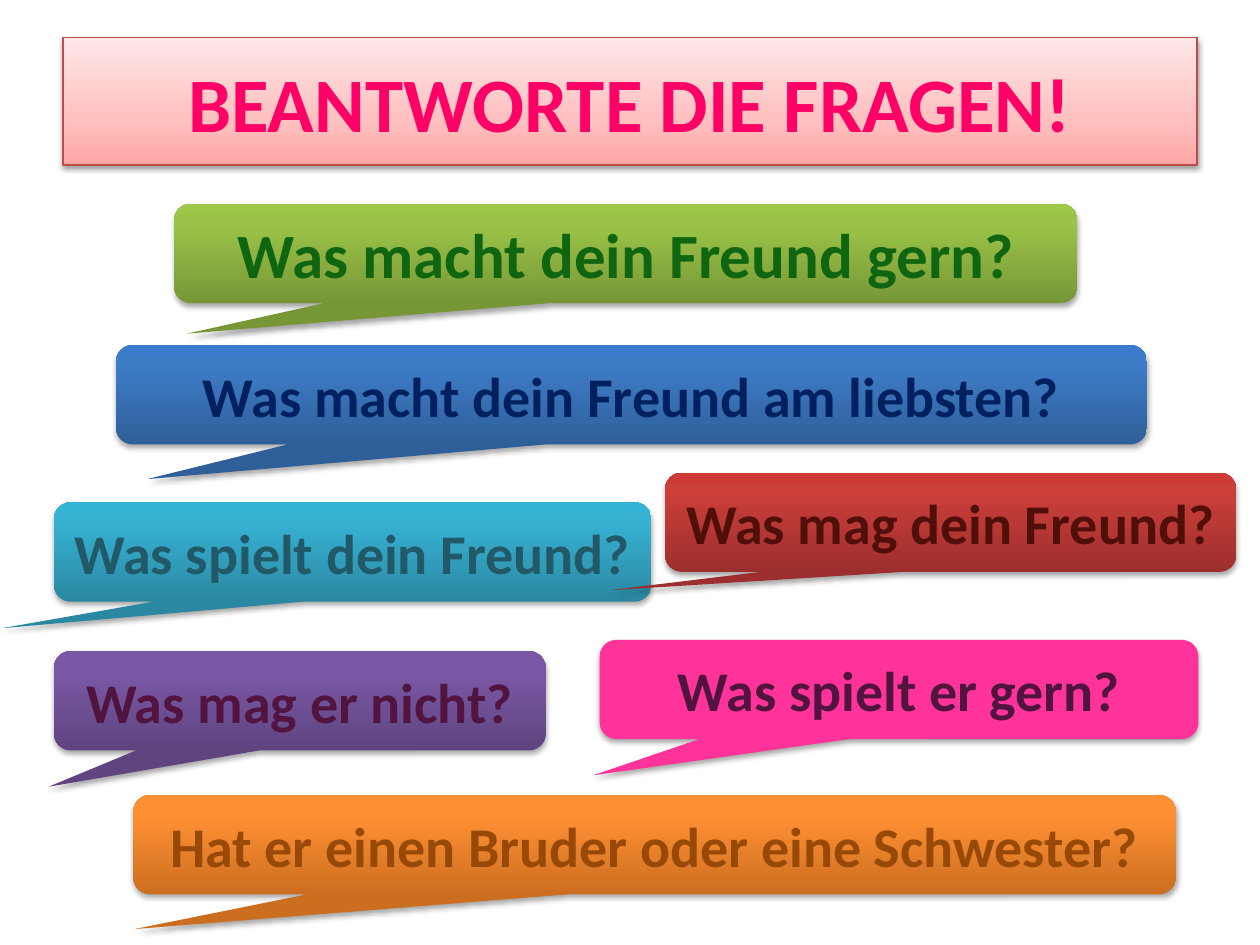
import copy
from dataclasses import dataclass

import pptx
import pptx.dml.color
import pptx.enum.shapes
import pptx.enum.text
import pptx.oxml
import pptx.oxml.ns
import pptx.util
from pptx.util import Cm


@dataclass(frozen=True)
class Style:
    fill: tuple
    text: str
    size: int = 32


@dataclass(frozen=True)
class Shadow:
    opacity: int
    distance: float
    blur: float = 3.15


@dataclass(frozen=True)
class Box:
    left: float
    top: float
    width: float
    height: float = 2.0


class Theme:
    font = "Calibri"
    title_line = "BF4C48"
    title_line_width = 0.75
    title_shadow = Shadow(38, 1.57)
    callout_shadow = Shadow(35, 1.81)
    title = Style(((0, "FFA6A5"), (35, "FFC0BF"), (100, "FFE7E7")), "FF0066", 44)
    green = Style(((0, "779737"), (80, "9BC348"), (100, "9DC746")), "106610", 36)
    blue = Style(((0, "2F5F99"), (80, "3D7CC7"), (100, "3A7CCB")), "002060")
    teal = Style(((0, "2A88A2"), (80, "37B1D2"), (100, "34B4D6")), "215968")
    red = Style(((0, "9C2F2D"), (80, "CB3E3A"), (100, "CE3B37")), "500F08")
    orange = Style(((0, "CC6E20"), (80, "FF9034"), (100, "FF9136")), "984807")
    purple = Style(((0, "5F4480"), (80, "7B58A6"), (100, "7C57A8")), "50143F")
    pink = Style(((0, "FF3399"),), "50143F")


CALLOUTS = [
    ("Was macht dein Freund gern?", Box(3.51, 4.11, 18.21), (-0.486, 0.809), Theme.green),
    ("Was macht dein Freund am liebsten?", Box(2.34, 6.96, 20.78), (-0.47, 0.85), Theme.blue),
    ("Was spielt dein Freund?", Box(1.09, 10.13, 12.04), (-0.588, 0.768), Theme.teal),
    ("Was mag dein Freund?", Box(13.41, 9.53, 11.51), (-0.6, 0.686), Theme.red),
    ("Hat er einen Bruder oder eine Schwester?", Box(2.69, 16.03, 21.01), (-0.499, 0.85), Theme.orange),
    ("Was mag er nicht?", Box(1.09, 13.13, 9.91), (-0.511, 0.865), Theme.purple),
    ("Was spielt er gern?", Box(12.09, 12.9, 12.07), (-0.511, 0.865), Theme.pink),
]


def rgb(value):
    return pptx.dml.color.RGBColor.from_string(value)


def set_fill(shape, colors):
    if len(colors) == 1:
        shape.fill.solid()
        shape.fill.fore_color.rgb = rgb(colors[0][1])
        return
    shape.fill.gradient()
    shape.fill.gradient_angle = 90
    stop_list = shape._element.spPr.find(".//" + pptx.oxml.ns.qn("a:gsLst"))
    while len(stop_list) < len(colors):
        stop_list.append(copy.deepcopy(stop_list[0]))
    for stop, (position, color) in zip(shape.fill.gradient_stops, colors):
        stop.position = position / 100
        stop.color.rgb = rgb(color)


def set_shadow(shape, shadow):
    shape.shadow.inherit = False
    effects = shape._element.spPr.find(pptx.oxml.ns.qn("a:effectLst"))
    effects.append(pptx.oxml.parse_xml(
        f'<a:outerShdw {pptx.oxml.ns.nsdecls("a")} blurRad="{pptx.util.Pt(shadow.blur)}" '
        f'dist="{pptx.util.Pt(shadow.distance)}" dir="5400000" rotWithShape="0">'
        f'<a:srgbClr val="000000"><a:alpha val="{shadow.opacity * 1000}"/></a:srgbClr>'
        '</a:outerShdw>'
    ))


def set_text(shape, text, style):
    frame = shape.text_frame
    frame.text = text
    frame.word_wrap = True
    frame.vertical_anchor = pptx.enum.text.MSO_ANCHOR.MIDDLE
    paragraph = frame.paragraphs[0]
    paragraph.alignment = pptx.enum.text.PP_ALIGN.CENTER
    font = paragraph.runs[0].font
    font.name = Theme.font
    font.size = pptx.util.Pt(style.size)
    font.bold = True
    font.color.rgb = rgb(style.text)


def format_shape(shape, text, style, shadow):
    set_fill(shape, style.fill)
    set_shadow(shape, shadow)
    set_text(shape, text, style)


def place_title(slide, box, text):
    title = slide.shapes.title
    title.left, title.top = Cm(box.left), Cm(box.top)
    title.width, title.height = Cm(box.width), Cm(box.height)
    format_shape(title, text, Theme.title, Theme.title_shadow)
    title.line.color.rgb = rgb(Theme.title_line)
    title.line.width = pptx.util.Pt(Theme.title_line_width)


def place_callout(slide, box, text, tail, style):
    callout = slide.shapes.add_shape(
        pptx.enum.shapes.MSO_SHAPE.ROUNDED_RECTANGULAR_CALLOUT,
        Cm(box.left), Cm(box.top), Cm(box.width), Cm(box.height),
    )
    callout.adjustments[0], callout.adjustments[1] = tail
    format_shape(callout, text, style, Theme.callout_shadow)
    callout.line.fill.background()


def main():
    presentation = pptx.Presentation()
    presentation.slide_width = Cm(25.4)
    presentation.slide_height = Cm(19.05)
    slide = presentation.slides.add_slide(presentation.slide_layouts.get_by_name("Title Only"))
    place_title(slide, Box(1.27, 0.76, 22.86, 2.57), "BEANTWORTE DIE FRAGEN!")
    for text, box, tail, style in CALLOUTS:
        place_callout(slide, box, text, tail, style)
    presentation.save("out.pptx")


if __name__ == "__main__":
    main()
